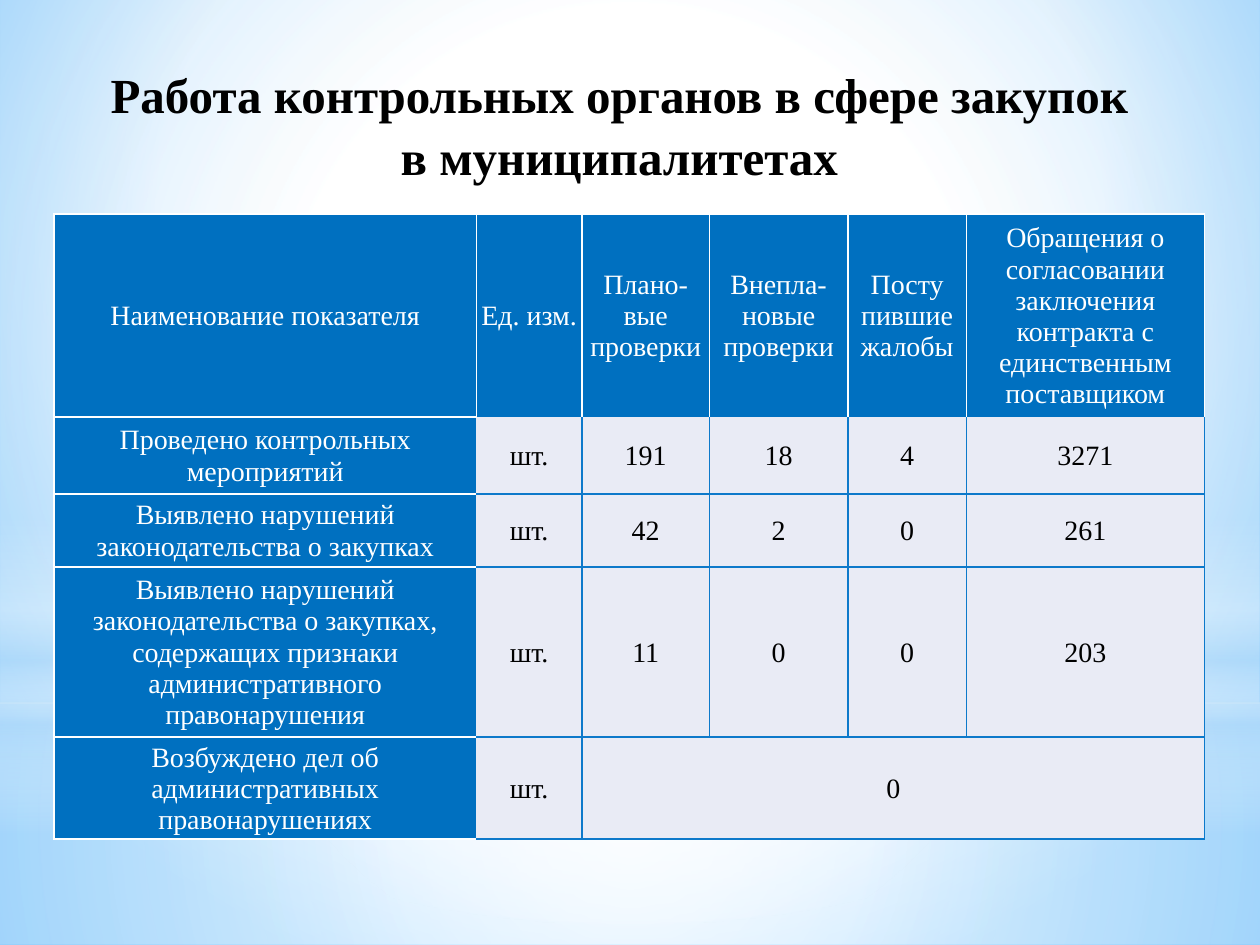
from lxml.etree import SubElement
from pptx import Presentation
from pptx.dml.color import RGBColor
from pptx.enum.shapes import MSO_SHAPE as Preset
from pptx.enum.text import MSO_ANCHOR as Anchor, MSO_AUTO_SIZE as AutoSize, PP_ALIGN as Align
from pptx.oxml.ns import qn
from pptx.util import Inches, Pt

COLORS = {"white": "FFFFFF", "black": "000000", "sky": "5BB9FF", "pale": "B4DCFA",
          "header": "0070C0", "body": "E9EBF5", "line": "0D79CA"}
FONT = "Times New Roman"
MIDDLE = (50, 50, 50, 50)


def set_gradient(fill, owner, stops, center=None):
    """Stops are (position, colour, opacity) in percent; without a center it runs downwards."""
    fill.gradient()
    gradient = owner.find(".//" + qn("a:gradFill"))
    for child in list(gradient):
        gradient.remove(child)
    stop_list = SubElement(gradient, qn("a:gsLst"))
    for position, color, opacity in stops:
        stop = SubElement(stop_list, qn("a:gs"), pos=str(position * 1000))
        tint = SubElement(stop, qn("a:srgbClr"), val=COLORS[color])
        if opacity < 100:
            SubElement(tint, qn("a:alpha"), val=str(opacity * 1000))
    if center:
        circle = SubElement(gradient, qn("a:path"), path="circle")
        edges = {side: str(share * 1000) for side, share in zip("ltrb", center)}
        SubElement(circle, qn("a:fillToRect"), edges)
    else:
        SubElement(gradient, qn("a:lin"), ang="5400000", scaled="0")


def style_text(para, size, color, bold=False):
    para.alignment = Align.CENTER
    for span in para.runs:
        span.font.name = FONT
        span.font.size = Pt(size)
        span.font.bold = bold
        span.font.color.rgb = RGBColor.from_string(COLORS[color])


deck = Presentation()
deck.slide_width, deck.slide_height = Inches(10), Inches(7.5)
page = deck.slides.add_slide(deck.slide_layouts[6])

# Sky background: a radial base and four translucent layers
set_gradient(page.background.fill, page.element,
             [(0, "white", 100), (60, "white", 100), (100, "sky", 100)], (20, 10, 20, 60))
layers = [
    (Preset.RECTANGLE, 5.58, 1.92, MIDDLE,
     [(0, "white", 91), (37, "white", 76), (100, "pale", 79)]),
    (Preset.RECTANGLE, 0, 5.58, MIDDLE,
     [(0, "white", 89), (48, "white", 62), (100, "pale", 79)]),
    (Preset.RECTANGLE, 4.12, 2.5, None,
     [(0, "white", 0), (29, "white", 30), (45, "pale", 40),
      (55, "white", 26), (65, "pale", 60), (100, "white", 0)]),
    (Preset.OVAL, 1.75, 5.58, MIDDLE, [(0, "white", 100), (56, "white", 0)]),
]
for preset, top, height, center, stops in layers:
    layer = page.shapes.add_shape(preset, 0, Inches(top), deck.slide_width, Inches(height))
    layer.shadow.inherit = False
    layer.line.fill.background()
    set_gradient(layer.fill, layer.element, stops, center)

# Title
title = page.shapes.add_textbox(Inches(0.7), Inches(0.44), Inches(8.43), Inches(1.04))
title.text_frame.word_wrap = True
title.text_frame.auto_size = AutoSize.SHAPE_TO_FIT_TEXT
title.text_frame.text = "Работа контрольных органов в сфере закупок в муниципалитетах"
heading = title.text_frame.paragraphs[0]
heading.line_spacing = 1.05
style_text(heading, 28, "black", bold=True)

# Table of inspection results
rows = [
    ["Наименование показателя", "Ед. изм.", "Плано- вые проверки", "Внепла- новые проверки",
     "Посту пившие жалобы",
     "Обращения о согласовании заключения контракта с единственным поставщиком"],
    ["Проведено контрольных мероприятий", "шт.", "191", "18", "4", "3271"],
    ["Выявлено нарушений законодательства о закупках", "шт.", "42", "2", "0", "261"],
    ["Выявлено нарушений законодательства о закупках, содержащих признаки "
     "административного правонарушения", "шт.", "11", "0", "0", "203"],
    ["Возбуждено дел об административных правонарушениях", "шт.", "0", "", "", ""],
]
column_widths = [3.35, 0.84, 1.01, 1.1, 0.94, 1.89]
row_heights = [1.61, 0.61, 0.58, 1.35, 0.8]
frame = page.shapes.add_table(len(rows), len(column_widths), Inches(0.43), Inches(1.7),
                              Inches(sum(column_widths)), Inches(sum(row_heights)))
table = frame.table
table.first_row = table.horz_banding = False
for column, width in zip(table.columns, column_widths):
    column.width = Inches(width)
for row, height in zip(table.rows, row_heights):
    row.height = Inches(height)
table.cell(4, 2).merge(table.cell(4, 5))

for r, texts in enumerate(rows):
    for c, text in enumerate(texts):
        cell = table.cell(r, c)
        is_header = r == 0 or c == 0
        if text:
            cell.text_frame.text = text
            style_text(cell.text_frame.paragraphs[0], 16, "white" if is_header else "black")
        cell.vertical_anchor = Anchor.MIDDLE
        cell.margin_left = cell.margin_right = cell.margin_top = Inches(0.01)
        cell.margin_bottom = 0

        # Header and body cells meet without a line, except below the corner cell
        hidden = set()
        if r == 0 and c > 0:
            hidden.add("B")
        if r > 0 and c == 0:
            hidden.add("R")
        if r == 1 and c > 0:
            hidden.add("T")
        if r > 0 and c == 1:
            hidden.add("L")
        properties = cell._tc.get_or_add_tcPr()
        for side in "LRTB":
            border = SubElement(properties, qn(f"a:ln{side}"), w=str(Pt(1)))
            if side in hidden:
                SubElement(border, qn("a:noFill"))
            else:
                paint = SubElement(border, qn("a:solidFill"))
                SubElement(paint, qn("a:srgbClr"), val=COLORS["white" if is_header else "line"])
        cell.fill.solid()
        cell.fill.fore_color.rgb = RGBColor.from_string(COLORS["header" if is_header else "body"])

deck.save("out.pptx")
